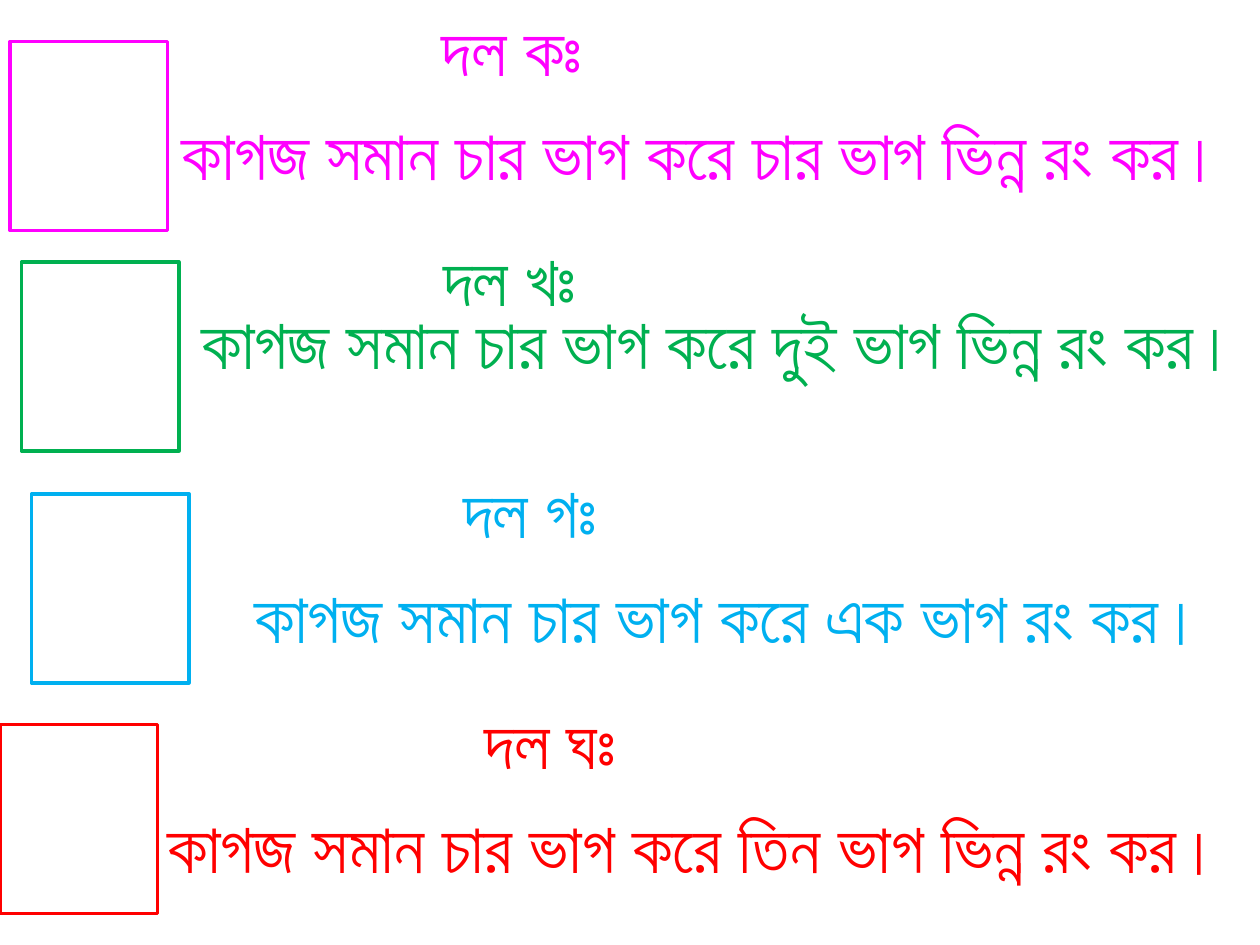
"""Build a slide with paper-folding tasks for four groups."""
from pptx import Presentation, util as u
from pptx.dml.color import RGBColor
from pptx.enum import shapes, text

PX = 9144
SLIDE_SIZE = (1000, 750)
PAPER_SIZE = (125, 150)
TEXT_HEIGHT = 77
COLORS = {
    "magenta": "FF00FF",
    "green": "00B050",
    "blue": "00B0F0",
    "red": "FF0000",
    "white": "FFFFFF",
}
GROUPS = [
    {"color": "magenta", "paper": (8, 33),
     "title": ("দল কঃ", 341, 0, 146),
     "task": ("কাগজ সমান চার ভাগ করে চার ভাগ ভিন্ন রং কর।", 134, 83, 866)},
    {"color": "green", "paper": (17, 208),
     "title": ("দল খঃ", 342, 183, 139),
     "task": ("কাগজ সমান চার ভাগ করে দুই ভাগ ভিন্ন রং কর।", 150, 233, 857)},
    {"color": "blue", "paper": (25, 392),
     "title": ("দল গঃ", 358, 367, 138),
     "task": ("কাগজ সমান চার ভাগ করে এক ভাগ রং কর।", 192, 450, 787)},
    {"color": "red", "paper": (0, 575),
     "title": ("দল ঘঃ", 375, 550, 138),
     "task": ("কাগজ সমান চার ভাগ করে তিন ভাগ ভিন্ন রং কর।", 123, 633, 875)},
]


def emu(*lengths):
    return [u.Emu(length * PX) for length in lengths]


def rgb(name):
    return RGBColor.from_string(COLORS[name])


def add_text(slide, words, left, top, width, *, color, size=40, font="Lato"):
    box = slide.shapes.add_textbox(*emu(left, top, width, TEXT_HEIGHT))
    frame = box.text_frame
    frame.word_wrap = False
    frame.auto_size = text.MSO_AUTO_SIZE.SHAPE_TO_FIT_TEXT
    run = frame.paragraphs[0].add_run()
    run.text = words
    run.font.name = font
    run.font.size = u.Pt(size)
    run.font.color.rgb = rgb(color)


def add_paper(slide, left, top, color):
    paper = slide.shapes.add_shape(
        shapes.MSO_SHAPE.RECTANGLE, *emu(left, top, *PAPER_SIZE))
    paper.shadow.inherit = False
    paper.fill.solid()
    paper.fill.fore_color.rgb = rgb("white")
    paper.line.color.rgb = rgb(color)
    paper.line.width = u.Pt(2)


def main():
    presentation = Presentation()
    presentation.slide_width, presentation.slide_height = emu(*SLIDE_SIZE)
    slide = presentation.slides.add_slide(presentation.slide_layouts[6])
    for group in GROUPS:
        for part in ("title", "task"):
            add_text(slide, *group[part], color=group["color"])
    for group in GROUPS:
        add_paper(slide, *group["paper"], group["color"])
    presentation.save("out.pptx")


if __name__ == "__main__":
    main()
